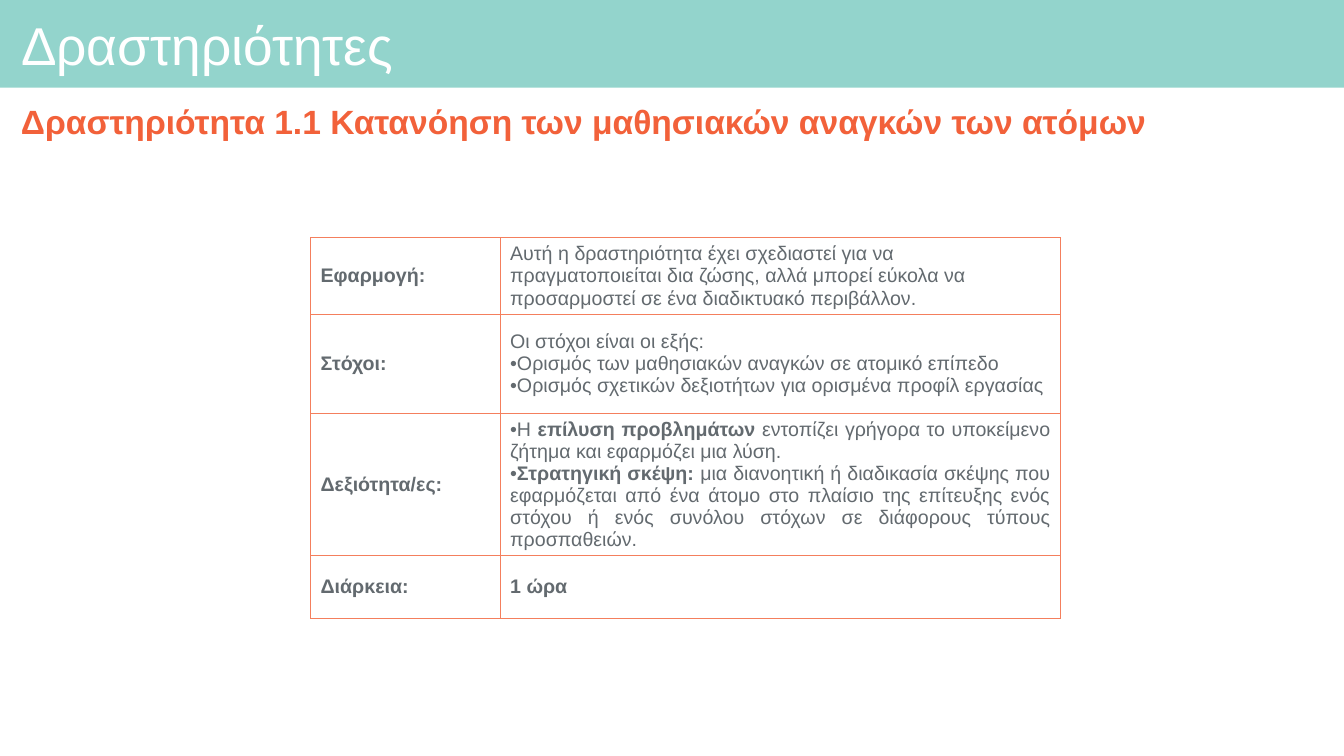
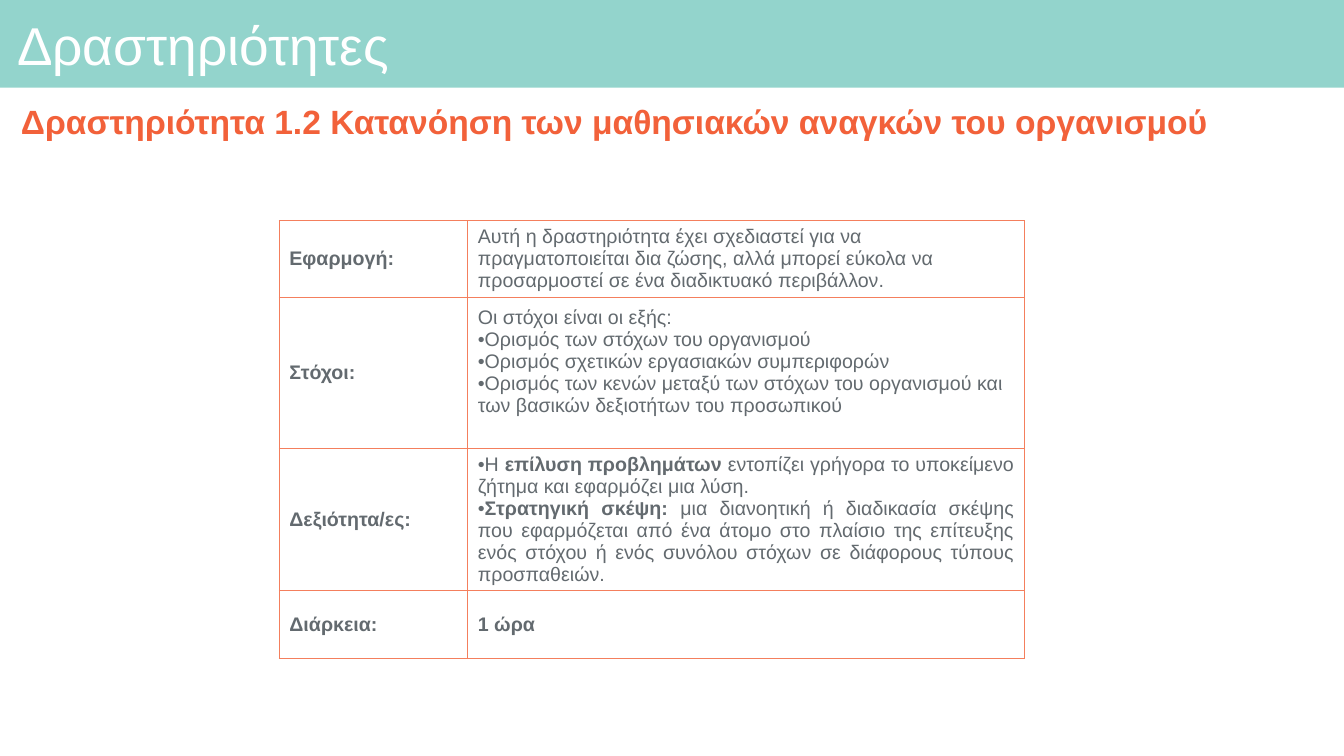
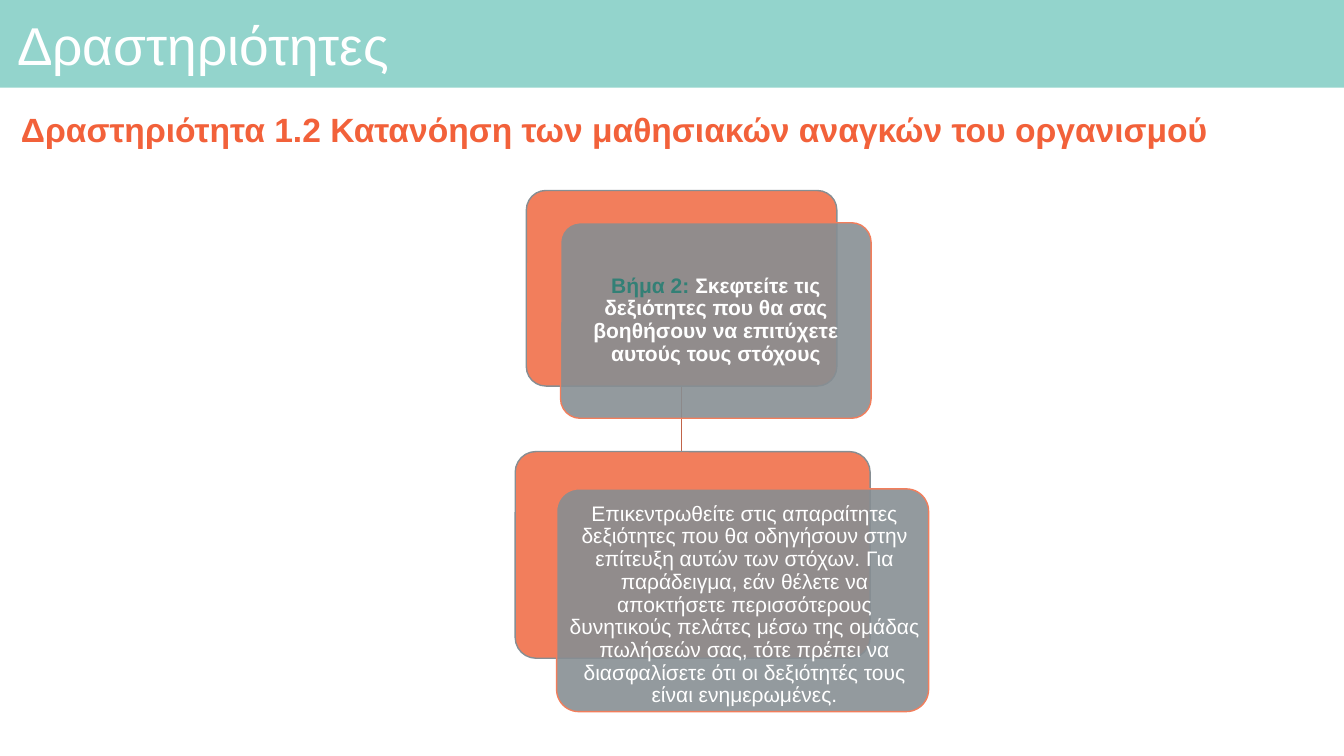
from lxml.etree import SubElement
from pptx import Presentation
from pptx.dml.color import RGBColor
from pptx.enum.shapes import MSO_CONNECTOR, MSO_SHAPE
from pptx.enum.text import MSO_ANCHOR, MSO_AUTO_SIZE, PP_ALIGN
from pptx.oxml.ns import qn
from pptx.util import Inches, Pt

TEAL = RGBColor(0x93, 0xD4, 0xCC)
DARK_TEAL = RGBColor(0x33, 0x80, 0x76)
WHITE = RGBColor(0xFF, 0xFF, 0xFF)
RED = RGBColor(0xF2, 0x61, 0x3A)
ORANGE = RGBColor(0xF2, 0x7E, 0x5C)
BORDER = RGBColor(0xF4, 0x7F, 0x5D)
RUST = RGBColor(0xC1, 0x64, 0x49)
GREY = RGBColor(0x86, 0x8E, 0x93)
TEXT = RGBColor(0x63, 0x6A, 0x6F)

TITLE = "Δραστηριότητες"
ACTIVITY_1 = "Δραστηριότητα 1.1 Κατανόηση των μαθησιακών αναγκών των ατόμων"
ACTIVITY_2 = "Δραστηριότητα 1.2 Κατανόηση των μαθησιακών αναγκών του οργανισμού"

# Table texts: a cell is a list of paragraphs, a paragraph a list of (text, bold)
LABELS = ["Εφαρμογή:", "Στόχοι:", "Δεξιότητα/ες:", "Διάρκεια:"]
APPLICATION = [[("Αυτή η δραστηριότητα έχει σχεδιαστεί για να πραγματοποιείται δια "
                 "ζώσης, αλλά μπορεί εύκολα να προσαρμοστεί σε ένα διαδικτυακό "
                 "περιβάλλον.", False)]]
GOALS_INTRO = "Οι στόχοι είναι οι εξής:"
GOALS_1 = ["Ορισμός των μαθησιακών αναγκών σε ατομικό επίπεδο",
           "Ορισμός σχετικών δεξιοτήτων για ορισμένα προφίλ εργασίας"]
GOALS_2 = ["Ορισμός των στόχων του οργανισμού",
           "Ορισμός σχετικών εργασιακών συμπεριφορών",
           "Ορισμός των κενών μεταξύ των στόχων του οργανισμού και των βασικών "
           "δεξιοτήτων του προσωπικού"]
SKILLS = [
    [("Η ", False), ("επίλυση προβλημάτων ", True),
     ("εντοπίζει γρήγορα το υποκείμενο ζήτημα και εφαρμόζει μια λύση.", False)],
    [("Στρατηγική σκέψη: ", True),
     ("μια διανοητική ή διαδικασία σκέψης που εφαρμόζεται από ένα άτομο στο πλαίσιο "
      "της επίτευξης ενός στόχου ή ενός συνόλου στόχων σε διάφορους τύπους "
      "προσπαθειών.", False)],
]
DURATION = [[("1 ώρα", True)]]

prs = Presentation()
prs.slide_width, prs.slide_height = Inches(13.33), Inches(7.5)
layout = prs.slide_layouts[5]


def style(p, size, color, bold=None, align=PP_ALIGN.LEFT, spacing=None):
    p.font.name, p.font.size, p.font.bold = "Arial", Pt(size), bold
    p.font.color.rgb = color
    p.alignment, p.line_spacing = align, spacing


def set_frame(tf, left, top, right, bottom):
    tf.margin_left, tf.margin_top = Inches(left), Inches(top)
    tf.margin_right, tf.margin_bottom = Inches(right), Inches(bottom)
    tf.word_wrap, tf.auto_size = True, MSO_AUTO_SIZE.NONE
    tf.vertical_anchor = MSO_ANCHOR.MIDDLE


# Title and activity heading of every slide
slides = []
for activity, title_inset, heading_top in [
        (ACTIVITY_1, 0.1, 0.93), (ACTIVITY_2, 0.06, 0.93), (ACTIVITY_2, 0.06, 1.01)]:
    s = prs.slides.add_slide(layout)
    slides.append(s)
    title = s.shapes.title
    title.left, title.top = Inches(0.11), Inches(0.09)
    title.width, title.height = Inches(13.06), Inches(0.78)
    title.text_frame.text = TITLE
    set_frame(title.text_frame, title_inset, 0.06, 0.06, 0.06)
    style(title.text_frame.paragraphs[0], 38, WHITE, spacing=0.9)

    heading = s.shapes.add_textbox(Inches(0.11), Inches(heading_top),
                                   Inches(13.06), Inches(0.6))
    heading.text_frame.text = activity
    set_frame(heading.text_frame, 0.1, 0.05, 0.1, 0.05)
    style(heading.text_frame.paragraphs[0], 24, RED, True, PP_ALIGN.JUSTIFY, 0.9)

# Title band, moved to the layout so that all slides share it
band = slides[0].shapes.add_shape(MSO_SHAPE.RECTANGLE, 0, 0, prs.slide_width, Inches(0.87))
band.fill.solid()
band.fill.fore_color.rgb = TEAL
band.line.fill.background()
band.shadow.inherit = False
layout.shapes.element.insert(2, band.element)

# Activity tables
for s, left, top, widths, heights, goals, goals_bottom in [
        (slides[0], 3.08, 2.36, (1.88, 5.56), (0.76, 0.98, 1.41, 0.62), GOALS_1, 0.05),
        (slides[1], 2.77, 2.19, (1.87, 5.52), (0.76, 1.5, 1.41, 0.67), GOALS_2, 0.27)]:
    table = s.shapes.add_table(4, 2, Inches(left), Inches(top),
                               Inches(sum(widths)), Inches(sum(heights))).table
    table.first_row = table.horz_banding = False
    for column, width in zip(table.columns, widths):
        column.width = Inches(width)
    goal_paragraphs = [[(text, False)] for text in [GOALS_INTRO] + goals]
    contents = [APPLICATION, goal_paragraphs, SKILLS, DURATION]
    for row, (label, content) in enumerate(zip(LABELS, contents)):
        table.rows[row].height = Inches(heights[row])
        for col, paragraphs in enumerate([[[(label, True)]], content]):
            cell = table.cell(row, col)
            cell.vertical_anchor = MSO_ANCHOR.MIDDLE
            cell.margin_left = cell.margin_right = Inches(0.1)
            cell.margin_top = Inches(0.05)
            cell.margin_bottom = Inches(goals_bottom if content is goal_paragraphs and col
                                        else 0.05)
            # Borders come before the fill in the cell properties
            tc_pr = cell._tc.get_or_add_tcPr()
            for side in ("a:lnL", "a:lnR", "a:lnT", "a:lnB"):
                ln = SubElement(tc_pr, qn(side), w=str(Pt(0.75)))
                SubElement(SubElement(ln, qn("a:solidFill")), qn("a:srgbClr"), val=str(BORDER))
            cell.fill.background()

            tf = cell.text_frame
            for i, runs in enumerate(paragraphs):
                p = tf.paragraphs[0] if i == 0 else tf.add_paragraph()
                is_skill = paragraphs is SKILLS
                style(p, 14, TEXT, align=PP_ALIGN.JUSTIFY if is_skill else PP_ALIGN.LEFT)
                for text, bold in runs:
                    r = p.add_run()
                    r.text, r.font.bold = text, bold
                if is_skill or i > 0:
                    p_pr = p._p.get_or_add_pPr()
                    p_pr.set("marL", "0")
                    p_pr.set("indent", "0")
                    bullet = SubElement(p_pr, qn("a:buChar"), char="•")
                    bullet.addprevious(SubElement(p_pr, qn("a:buFont"), typeface="Arial"))
                    # Bullets precede the default run properties
                    for def_rpr in p_pr.findall(qn("a:defRPr")):
                        p_pr.append(def_rpr)

# Step diagram: the connector lies behind the cards
s = slides[2]
link = s.shapes.add_connector(MSO_CONNECTOR.STRAIGHT, Inches(6.76), Inches(3.83),
                              Inches(6.76), Inches(4.72))
link.line.color.rgb, link.line.width = RUST, Pt(1)
SubElement(link.element.spPr, qn("a:effectLst"))

STEP = [("Βήμα 2: ", DARK_TEAL),
        ("Σκεφτείτε τις δεξιότητες που θα σας βοηθήσουν να επιτύχετε αυτούς τους στόχους",
         WHITE)]
DETAIL = [("Επικεντρωθείτε στις απαραίτητες δεξιότητες που θα οδηγήσουν στην επίτευξη "
           "αυτών των στόχων. Για παράδειγμα, εάν θέλετε να αποκτήσετε περισσότερους "
           "δυνητικούς πελάτες μέσω της ομάδας πωλήσεών σας, τότε πρέπει να διασφαλίσετε "
           "ότι οι δεξιότητές τους είναι ενημερωμένες.", WHITE)]
for back, front, runs, bold, insets in [
        ((5.22, 1.89, 3.08, 1.94), (5.56, 2.21, 3.08, 1.94), STEP, True,
         (0.06, 0.06, 0.06, 0.06)),
        ((5.11, 4.48, 3.52, 2.05), (5.52, 4.85, 3.69, 2.21), DETAIL, False,
         (0.04, 0.1, 0, 0))]:
    for box, fill, line in [(back, ORANGE, GREY), (front, GREY, ORANGE)]:
        card = s.shapes.add_shape(MSO_SHAPE.ROUNDED_RECTANGLE, *[Inches(v) for v in box])
        card.adjustments[0] = 0.1
        card.fill.solid()
        card.fill.fore_color.rgb = fill
        card.line.color.rgb, card.line.width = line, Pt(1)
        card.shadow.inherit = False
    # The front card is see-through and holds the text
    color = card.element.spPr.find(qn("a:solidFill")).find(qn("a:srgbClr"))
    SubElement(color, qn("a:alpha"), val="89000")
    set_frame(card.text_frame, *insets)
    p = card.text_frame.paragraphs[0]
    style(p, 15, WHITE, bold, PP_ALIGN.CENTER, 0.9)
    for text, run_color in runs:
        r = p.add_run()
        r.text, r.font.color.rgb = text, run_color

prs.save("out.pptx")
